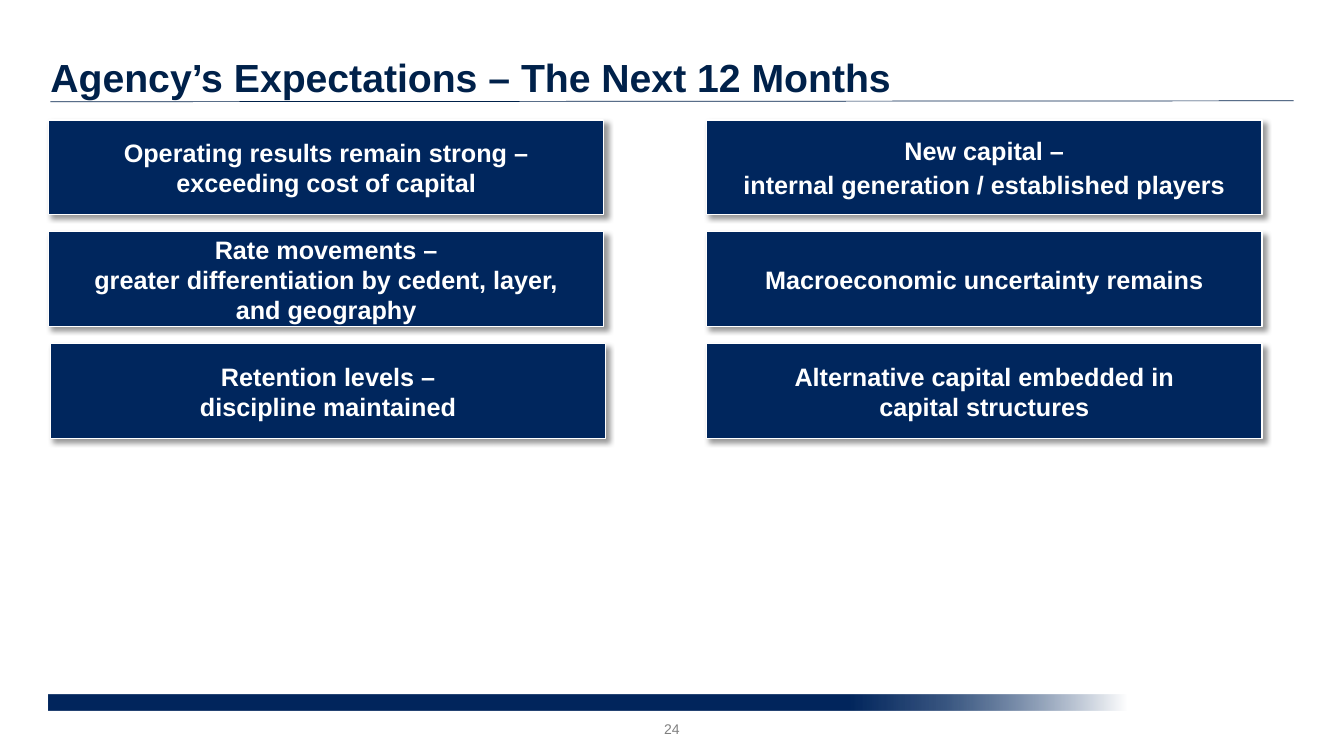
from lxml import etree
from pptx import Presentation
from pptx import util as u
from pptx.dml.color import RGBColor
from pptx.enum import shapes, text
from pptx.oxml.ns import qn

Pt = u.Pt
NAVY, INK, WHITE, GREY = "00265D", "00214A", "FFFFFF", "808080"
LEFT_COLUMN = [
    ["Operating results remain strong –\vexceeding cost of capital"],
    ["Rate movements –\vgreater differentiation by cedent, layer,\vand geography"],
    ["Retention levels –\vdiscipline maintained"],
]
RIGHT_COLUMN = [
    ["New capital –", "internal generation / established players"],
    ["Macroeconomic uncertainty remains"],
    ["Alternative capital embedded in\vcapital structures"],
]


def rgb(value):
    return RGBColor.from_string(value)


def add_colour(parent, value, alpha=100):
    clr = etree.SubElement(parent, qn("a:srgbClr"), val=value)
    if alpha < 100:
        etree.SubElement(clr, qn("a:alpha"), val=str(alpha * 1000))


def set_margins(tf, left, top, right, bottom):
    tf.margin_left, tf.margin_top = Pt(left), Pt(top)
    tf.margin_right, tf.margin_bottom = Pt(right), Pt(bottom)


def format_text(tf, size, colour, bold, align, anchor):
    tf.word_wrap = True
    tf.auto_size = text.MSO_AUTO_SIZE.NONE
    tf.vertical_anchor = anchor
    for p in tf.paragraphs:
        p.alignment = align
        for r in p.runs:
            r.font.name, r.font.size, r.font.bold = "Arial", Pt(size), bold
            r.font.color.rgb = rgb(colour)


def add_title(s, x, y, w, h, words):
    sp = s.shapes.title
    sp.left, sp.top, sp.width, sp.height = Pt(x), Pt(y), Pt(w), Pt(h)
    tf = sp.text_frame
    tf.text = words
    set_margins(tf, 36, 36, 36, 0)
    format_text(tf, 28, INK, True, text.PP_ALIGN.LEFT, text.MSO_ANCHOR.BOTTOM)
    tf.paragraphs[0].line_spacing = 0.9
    # Rule under the title
    rule = s.shapes.add_connector(shapes.MSO_CONNECTOR.STRAIGHT,
                                  Pt(x + 36), Pt(y + h + 0.7), Pt(x + w - 36), Pt(y + h))
    rule.line.color.rgb = rgb(INK)
    rule.line.width = Pt(0.5)
    etree.SubElement(rule.element.spPr, qn("a:effectLst"))


def add_card(s, x, y, w, h, lines):
    sp = s.shapes.add_shape(shapes.MSO_SHAPE.RECTANGLE, Pt(x), Pt(y), Pt(w), Pt(h))
    sp.fill.solid()
    sp.fill.fore_color.rgb = rgb(NAVY)
    sp.line.color.rgb = rgb(WHITE)
    sp.line.width = Pt(1)
    # Soft shadow to the lower right
    sp.shadow.inherit = False
    effects = sp.element.spPr.find(qn("a:effectLst"))
    shadow = etree.SubElement(effects, qn("a:outerShdw"), blurRad=str(Pt(4)),
                              dist=str(Pt(3)), dir=str(45 * 60000),
                              algn="tl", rotWithShape="0")
    add_colour(shadow, "000000", 40)
    tf = sp.text_frame
    tf.text = "\n".join(lines)
    for p in tf.paragraphs:
        p.space_after = Pt(3)
    set_margins(tf, 2.9, 5.4, 2.9, 5.4)
    format_text(tf, 18, WHITE, True, text.PP_ALIGN.CENTER, text.MSO_ANCHOR.MIDDLE)


def add_column(s, x, y, w, h, cards, gap=12.2, last_shift=0):
    card_h = (h - gap * (len(cards) - 1)) / len(cards)
    for i, lines in enumerate(cards):
        shift = last_shift if i == len(cards) - 1 else 0
        add_card(s, x + shift, y + i * (card_h + gap), w, card_h, lines)


def add_footer(s, x, y, w, h, number):
    # Bar fading to the right
    bar = s.shapes.add_shape(shapes.MSO_SHAPE.RECTANGLE, Pt(x), Pt(y), Pt(w), Pt(h))
    bar.shadow.inherit = False
    bar.line.fill.background()
    bar.fill.gradient()
    bar.fill.gradient_angle = 0
    stops = bar.element.spPr.find(qn("a:gradFill")).find(qn("a:gsLst"))
    for old in list(stops):
        stops.remove(old)
    for pos, colour, alpha in [(0, NAVY, 100), (74, NAVY, 100), (83, NAVY, 78), (100, WHITE, 100)]:
        add_colour(etree.SubElement(stops, qn("a:gs"), pos=str(pos * 1000)), colour, alpha)
    # Page number
    box = s.shapes.add_textbox(Pt(x + 364.4), Pt(y + 10), Pt(162), Pt(28.8))
    box.text_frame.text = number
    format_text(box.text_frame, 10, GREY, False, text.PP_ALIGN.CENTER, text.MSO_ANCHOR.MIDDLE)


def main():
    prs = Presentation()
    prs.slide_width, prs.slide_height = Pt(960), Pt(540)
    s = prs.slides.add_slide(prs.slide_layouts[5])
    add_footer(s, 34.6, 496.1, 769.7, 11.5, "24")
    add_title(s, 0, 0, 960, 72, "Agency’s Expectations – The Next 12 Months")
    add_column(s, 34.6, 85.7, 396.7, 227.5, LEFT_COLUMN, last_shift=1.4)
    add_column(s, 504.7, 85.7, 396.7, 227.5, RIGHT_COLUMN)
    prs.save("out.pptx")


if __name__ == "__main__":
    main()
